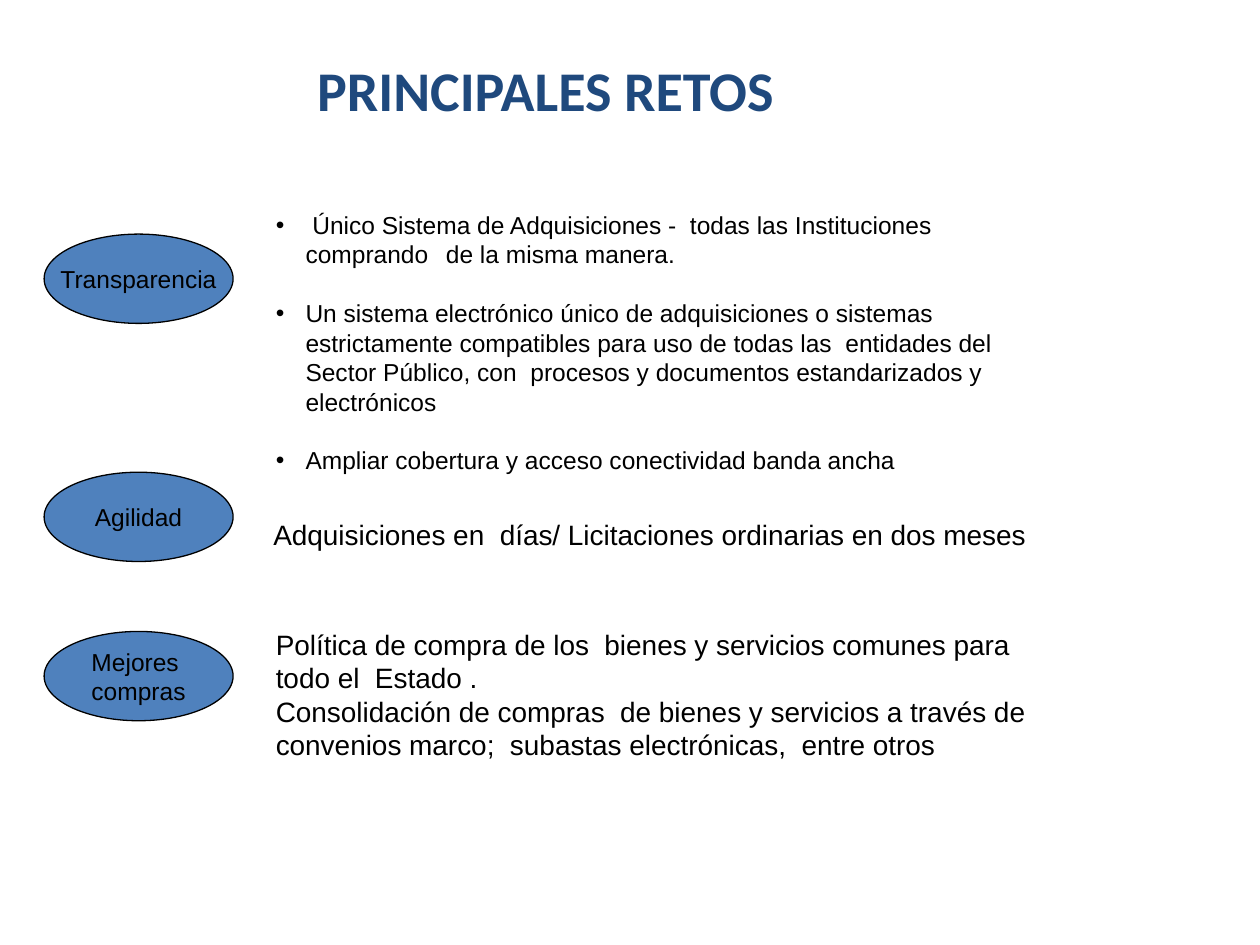
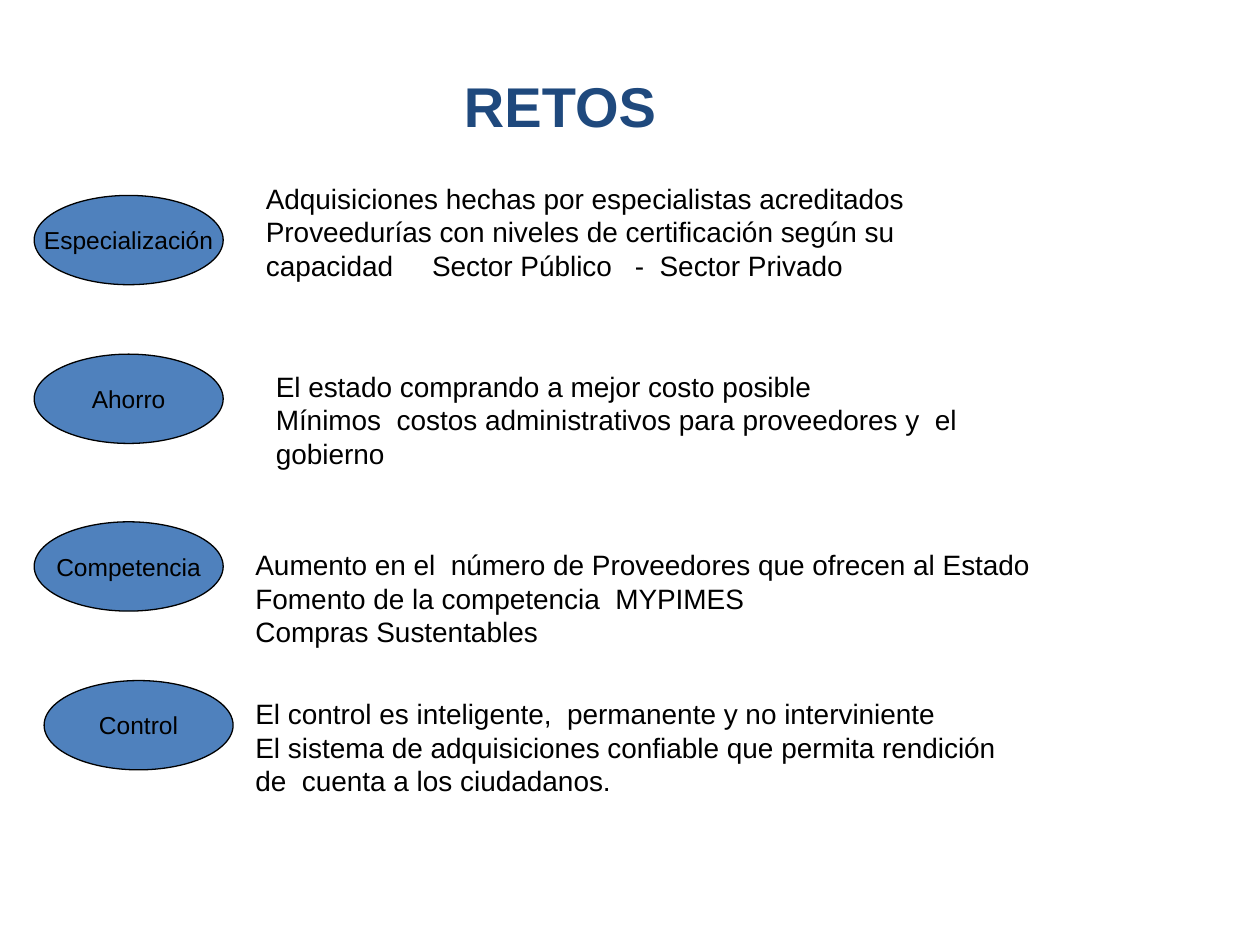
from dataclasses import dataclass

from lxml.etree import SubElement
from pptx import Presentation
from pptx.dml.color import RGBColor
from pptx.enum.shapes import MSO_SHAPE
from pptx.enum.text import MSO_ANCHOR, PP_ALIGN
from pptx.oxml.ns import qn
from pptx.util import Cm, Pt


@dataclass(frozen=True)
class Theme:
    title_color: RGBColor = RGBColor(0x1F, 0x49, 0x7D)
    oval_fill: RGBColor = RGBColor(0x4F, 0x81, 0xBD)
    ink: RGBColor = RGBColor(0, 0, 0)
    body_font: str = "Arial"
    heading_font: str = "Calibri"
    title_size: int = 32
    text_size: int = 16
    small_size: int = 14
    bullet_gap: float = 16.8


class SlideBuilder:
    OVAL_SIZE = (Cm(3.81), Cm(1.8))
    BULLET_INDENT = Cm(0.6)

    def __init__(self, deck, theme):
        self.deck = deck
        self.theme = theme
        self.slide = None

    def new_slide(self):
        self.slide = self.deck.slides.add_slide(self.deck.slide_layouts[6])

    def set_text(self, frame, lines, size, font=None, color=None, bold=False, align=PP_ALIGN.LEFT):
        """Fill a text frame with one paragraph per line, all in one style."""
        frame.text = "\n".join(lines)
        for para in frame.paragraphs:
            para.alignment = align
            for span in para.runs:
                span.font.size = Pt(size)
                span.font.name = font or self.theme.body_font
                span.font.color.rgb = color or self.theme.ink
                span.font.bold = bold

    def text_frame(self, left, top, width, height):
        box = self.slide.shapes.add_textbox(Cm(left), Cm(top), Cm(width), Cm(height))
        box.text_frame.word_wrap = True
        return box.text_frame

    def title(self, text, area, font):
        frame = self.text_frame(*area)
        frame.vertical_anchor = MSO_ANCHOR.MIDDLE
        self.set_text(frame, [text], self.theme.title_size, font,
                      self.theme.title_color, True, PP_ALIGN.CENTER)

    def oval(self, left, top, lines):
        oval = self.slide.shapes.add_shape(MSO_SHAPE.OVAL, Cm(left), Cm(top), *self.OVAL_SIZE)
        oval.shadow.inherit = False
        oval.fill.solid()
        oval.fill.fore_color.rgb = self.theme.oval_fill
        oval.line.color.rgb = self.theme.ink
        oval.line.width = Pt(0.75)
        oval.text_frame.word_wrap = False
        oval.text_frame.vertical_anchor = MSO_ANCHOR.MIDDLE
        self.set_text(oval.text_frame, lines, self.theme.small_size, align=PP_ALIGN.CENTER)

    def description(self, area, lines):
        frame = self.text_frame(*area)
        self.set_text(frame, lines, self.theme.text_size)
        return frame

    def bullets(self, area, lines):
        frame = self.text_frame(*area)
        self.set_text(frame, lines, self.theme.small_size)
        for para in frame.paragraphs[1:]:
            para.space_before = Pt(self.theme.bullet_gap)
        for para in frame.paragraphs:
            properties = para._p.get_or_add_pPr()
            properties.set("marL", str(self.BULLET_INDENT))
            properties.set("indent", str(-self.BULLET_INDENT))
            SubElement(properties, qn("a:buFont"), typeface=self.theme.body_font)
            SubElement(properties, qn("a:buChar"), char="•")
        return frame

    def tab_stops(self, para, *positions):
        stops = SubElement(para._p.get_or_add_pPr(), qn("a:tabLst"))
        for position in positions:
            SubElement(stops, qn("a:tab"), pos=str(Cm(position)), algn="l")


def build_main_challenges(builder):
    builder.new_slide()
    builder.title("PRINCIPALES RETOS", (0, 0.2, 22, 3.18), builder.theme.heading_font)
    for top, lines in (
        (4.72, ["Transparencia"]),
        (9.52, ["Agilidad"]),
        (12.73, ["Mejores ", "compras"]),
    ):
        builder.oval(0.89, top, lines)

    transparency = builder.bullets((5.31, 4.11, 16.03, 5.08), [
        " Único Sistema de Adquisiciones -  todas las Instituciones "
        "comprando\tde la misma manera.",
        "Un sistema electrónico único de adquisiciones o sistemas estrictamente "
        "compatibles para uso de todas las  entidades del Sector Público, con  "
        "procesos y documentos estandarizados y electrónicos",
        "Ampliar cobertura y acceso conectividad banda ancha",
    ])
    builder.tab_stops(transparency.paragraphs[0], 3.43)
    builder.description((5.26, 10.31, 15.88, 0.94), [
        "Adquisiciones en  días/ Licitaciones ordinarias en dos meses",
    ])
    builder.description((5.31, 12.52, 16, 2.97), [
        "Política de compra de los  bienes y servicios comunes para todo el  Estado .",
        "Consolidación de compras  de bienes y servicios a través de convenios marco;  "
        "subastas electrónicas,  entre otros",
    ])


def build_more_challenges(builder):
    builder.new_slide()
    builder.title("RETOS", (4.09, 1.32, 14.4, 1.6), builder.theme.body_font)
    for left, top, label in (
        (0.69, 3.94, "Especialización"),
        (0.69, 7.14, "Ahorro"),
        (0.69, 10.52, "Competencia"),
        (0.89, 13.72, "Control"),
    ):
        builder.oval(left, top, [label])

    specialization = builder.description((5.11, 3.53, 15.21, 2.29), [
        "Adquisiciones hechas por especialistas acreditados",
        "Proveedurías con niveles de certificación según su "
        "capacidad\tSector Público\t-  Sector Privado",
    ])
    builder.tab_stops(specialization.paragraphs[1], 3.35, 7.44)
    builder.description((5.31, 7.32, 15.8, 2.39), [
        "El estado comprando a mejor costo posible",
        "Mínimos  costos administrativos para proveedores y  el gobierno",
    ])
    builder.description((4.9, 10.92, 16.41, 2.39), [
        "Aumento en el  número de Proveedores que ofrecen al Estado",
        "Fomento de la competencia  MYPIMES",
        "Compras Sustentables",
    ])
    builder.description((4.9, 13.92, 18.39, 2.29), [
        "El control es inteligente,  permanente y no interviniente",
        "El sistema de adquisiciones confiable que permita rendición",
        "de  cuenta a los ciudadanos.",
    ])


def main():
    deck = Presentation()
    deck.slide_width, deck.slide_height = Cm(25.4), Cm(19.05)
    builder = SlideBuilder(deck, Theme())
    build_main_challenges(builder)
    build_more_challenges(builder)
    deck.save("out.pptx")


if __name__ == "__main__":
    main()
